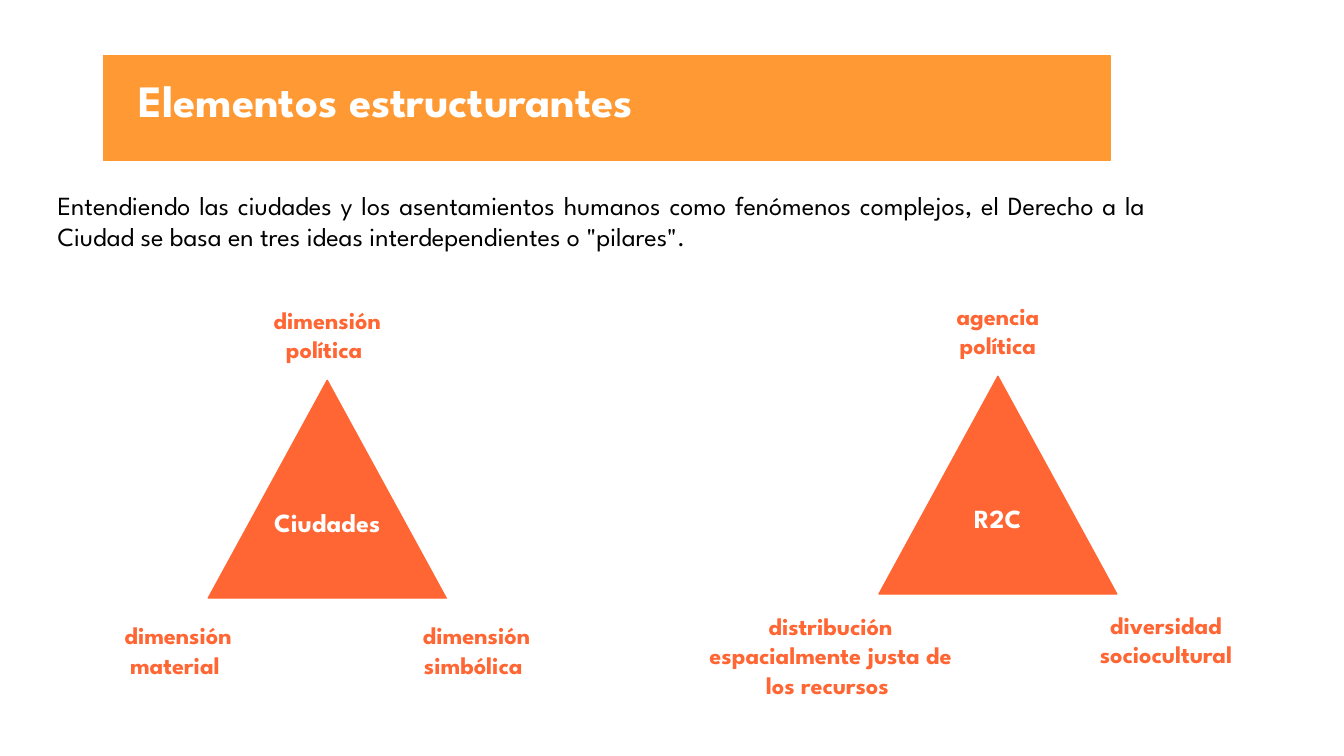
from dataclasses import dataclass

from pptx import Presentation
from pptx.dml.color import RGBColor
from pptx.enum.shapes import MSO_SHAPE as Shape
from pptx.enum.text import MSO_ANCHOR as Anchor, MSO_AUTO_SIZE as Fit, PP_ALIGN as Align
from pptx.util import Inches, Pt

FONT = "League Spartan"
AMBER, CORAL, WHITE, BLACK = "FF9933", "FF6633", "FFFFFF", "000000"
BASE, RISE = 17.7, 16.2  # triangle size in grid units


@dataclass
class Label:
    text: str
    dx: float  # centre, from the apex
    dy: float  # top, from the apex
    wide: float = 12.4
    high: float = 5.4


@dataclass
class Trio:
    name: str
    x: float  # apex
    y: float
    wide: float  # width of the name box
    labels: list[Label]


TRIOS = [
    Trio("Ciudades", 24.35, 28.3, 12.4, [
        Label("dimensión\npolítica ", 0, -6.1),
        Label("dimensión\nsimbólica ", 11.1, 17.35),
        Label("dimensión\nmaterial ", -11.1, 17.35),
    ]),
    Trio("R2C", 74.25, 28, 8.6, [
        Label("agencia\npolítica", 0, -6.1),
        Label("diversidad sociocultural", 12.5, 16.9, 15.2),
        Label("distribución espacialmente justa de los recursos ", -12.45, 16.55, 21.6, 8.4),
    ]),
]

deck = Presentation()
deck.slide_width = Inches(10)
deck.slide_height = deck.slide_width * 9 // 16
slide = deck.slides.add_slide(deck.slide_layouts[5])
UNIT = deck.slide_width / 100


def grid(*units: float) -> list[int]:
    """Turn hundredths of the slide's width into lengths."""
    return [round(u * UNIT) for u in units]


def color(code: str) -> RGBColor:
    return RGBColor.from_string(code)


def write(box, text: str, size: float, ink: str, bold=True, align=Align.CENTER,
          anchor=Anchor.TOP, fit=Fit.SHAPE_TO_FIT_TEXT, space=1.0) -> None:
    frame = box.text_frame
    frame.text = text
    frame.word_wrap, frame.auto_size = True, fit
    frame.vertical_anchor = anchor
    frame.margin_left = frame.margin_right = Inches(0.1)
    frame.margin_top = frame.margin_bottom = Inches(0.1)
    for para in frame.paragraphs:
        para.alignment, para.line_spacing = align, space
        for run in para.runs:
            font = run.font
            font.name, font.size, font.bold = FONT, Pt(size), bold
            font.color.rgb = color(ink)


def block(kind: Shape, fill: str, *place: float, edge: bool = True):
    part = slide.shapes.add_shape(kind, *grid(*place))
    part.shadow.inherit = False
    part.fill.solid()
    part.fill.fore_color.rgb = color(fill)
    if edge:
        part.line.color.rgb = color(fill)
        part.line.width = Pt(0.75)
    else:
        part.line.fill.background()
    return part


def draw(trio: Trio) -> None:
    block(Shape.ISOSCELES_TRIANGLE, CORAL, trio.x - BASE / 2, trio.y, BASE, RISE)
    name = slide.shapes.add_textbox(
        *grid(trio.x - trio.wide / 2, trio.y + 8.4, trio.wide, 4.4))
    write(name, trio.name, 14, WHITE)
    for label in trio.labels:
        left = trio.x + label.dx - label.wide / 2
        box = block(Shape.RECTANGLE, WHITE, left, trio.y + label.dy,
                    label.wide, label.high, edge=False)
        write(box, label.text, 13, CORAL, anchor=Anchor.MIDDLE, fit=Fit.NONE)


title = slide.shapes.title
title.left, title.top, title.width, title.height = grid(9.3, 4.7, 63.9, 5.9)
write(title, "Elementos estructurantes", 24, WHITE, align=Align.LEFT, space=0.95)
banner = block(Shape.RECTANGLE, AMBER, 7.7, 4.15, 74.9, 7.8)
title.element.addprevious(banner.element)  # banner goes behind the title

intro = slide.shapes.add_textbox(*grid(3.3, 13.1, 83, 6.7))
write(intro, "Entendiendo las ciudades y los asentamientos humanos como fenómenos "
      "complejos, el Derecho a la Ciudad se basa en tres ideas interdependientes "
      'o "pilares".', 14, BLACK, bold=False, align=Align.JUSTIFY)

for trio in TRIOS:
    draw(trio)

deck.save("out.pptx")
